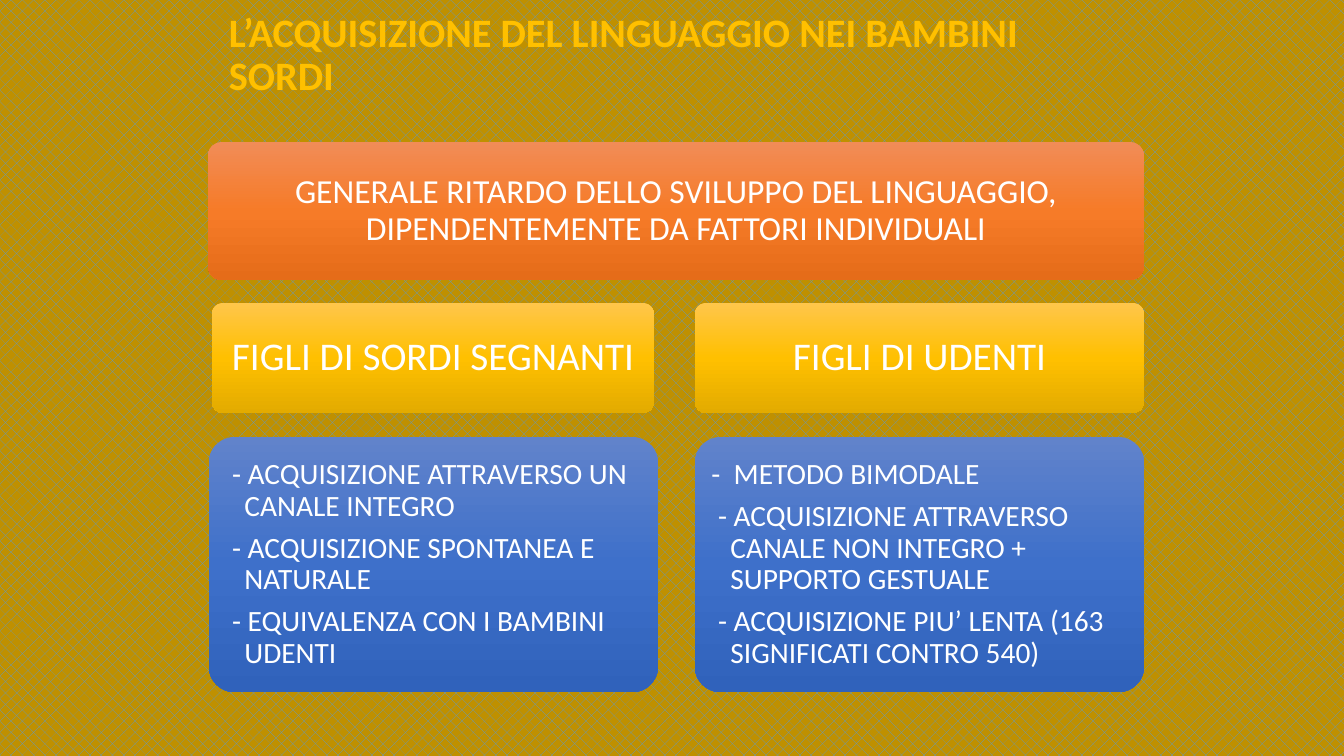
from copy import deepcopy

from pptx import Presentation
from pptx.dml.color import RGBColor
from pptx.enum.dml import MSO_PATTERN
from pptx.enum.shapes import MSO_SHAPE
from pptx.enum.text import MSO_ANCHOR, PP_ALIGN
from pptx.util import Emu, Pt

# Content
TITLE = "L’ACQUISIZIONE DEL LINGUAGGIO NEI BAMBINI SORDI"
SUMMARY = "GENERALE RITARDO DELLO SVILUPPO DEL LINGUAGGIO, DIPENDENTEMENTE DA FATTORI INDIVIDUALI"
GROUPS = [
    ("FIGLI DI SORDI SEGNANTI", [
        " - ACQUISIZIONE ATTRAVERSO UN CANALE INTEGRO",
        " - ACQUISIZIONE SPONTANEA E NATURALE",
        " - EQUIVALENZA CON I BAMBINI UDENTI",
    ]),
    ("FIGLI DI UDENTI", [
        "-  METODO BIMODALE",
        " - ACQUISIZIONE ATTRAVERSO CANALE NON INTEGRO + SUPPORTO GESTUALE",
        " - ACQUISIZIONE PIU’ LENTA (163 SIGNIFICATI CONTRO 540)",
    ]),
]

THEME = {
    "font": "Calibri",
    "title": {"size": 28.8, "color": "FFC000"},
    "text": "FFFFFF",
    "pattern": {"fore_color": "5B9BD5", "back_color": "BF9000"},
    "summary": {"size": 24, "inset": 10, "stops": ("F18C57", "F67B28", "E56C19")},
    "heading": {"size": 28, "inset": 12, "stops": ("FFC64B", "FFC000", "E3AB00")},
    "card": {"size": 21, "inset": 9, "stops": ("6183CB", "3E70CA", "3062BB")},
}

# Geometry in px
SCALE = 914400 / 100.8
PAGE = (1344, 756)
TITLE_BOX = (219, 16, 907, 80)
SUMMARY_BOX = (208, 142, 936, 138)
HEADING_ROW = (303, 110)
CARD_ROW = (437, 255)
COLUMNS = [{"heading": (212, 442), "card": (209, 449)},
           {"heading": (695, 449), "card": (695, 449)}]
HANGING = 19


def px(value):
    return Emu(round(value * SCALE))


def apply(target, values):
    for name, value in values.items():
        setattr(target, name, value)


def write(frame, lines, size, color, inset=None, bold=False, align=PP_ALIGN.LEFT, hanging=0):
    apply(frame, {"word_wrap": True, "vertical_anchor": MSO_ANCHOR.MIDDLE})
    if inset:
        sides = ("left", "top", "right", "bottom")
        apply(frame, {f"margin_{side}": px(inset) for side in sides})
    for index, line in enumerate(lines):
        para = frame.add_paragraph() if index else frame.paragraphs[0]
        apply(para, {"alignment": align, "line_spacing": 0.9, "space_after": Pt(0.35 * size)})
        if hanging:
            properties = para._p.get_or_add_pPr()
            properties.set("marL", str(px(hanging)))
            properties.set("indent", str(-px(hanging)))
        span = para.add_run()
        span.text = line
        apply(span.font, {"name": THEME["font"], "size": Pt(size), "bold": bold})
        span.font.color.rgb = RGBColor.from_string(color)


def add_panel(page, box, style, lines, **text_format):
    panel = page.shapes.add_shape(MSO_SHAPE.ROUNDED_RECTANGLE, *map(px, box))
    panel.adjustments[0] = 0.1
    panel.shadow.inherit = False
    panel.line.fill.background()

    # Vertical three-stop gradient
    panel.fill.gradient()
    panel.fill.gradient_angle = 270
    stop_list = panel.element.spPr.xpath(".//a:gsLst")[0]
    stop_list.insert(1, deepcopy(stop_list[0]))
    for index, stop in enumerate(panel.fill.gradient_stops):
        stop.position = index / 2
        stop.color.rgb = RGBColor.from_string(style["stops"][index])

    write(panel.text_frame, lines, style["size"], THEME["text"], style["inset"], **text_format)


def main():
    deck = Presentation()
    apply(deck, {"slide_width": px(PAGE[0]), "slide_height": px(PAGE[1])})
    page = deck.slides.add_slide(deck.slide_layouts[6])

    # Patterned background
    backdrop = page.background.fill
    backdrop.patterned()
    backdrop.pattern = MSO_PATTERN.PERCENT_25
    for part, color in THEME["pattern"].items():
        getattr(backdrop, part).rgb = RGBColor.from_string(color)

    # Title and summary
    title = page.shapes.add_textbox(*map(px, TITLE_BOX))
    write(title.text_frame, [TITLE], **THEME["title"], bold=True)
    add_panel(page, SUMMARY_BOX, THEME["summary"], [SUMMARY], align=PP_ALIGN.CENTER)

    # One heading and one card per group
    for (heading, points), column in zip(GROUPS, COLUMNS):
        left, width = column["heading"]
        top, height = HEADING_ROW
        add_panel(page, (left, top, width, height), THEME["heading"], [heading],
                  align=PP_ALIGN.CENTER)
        left, width = column["card"]
        top, height = CARD_ROW
        add_panel(page, (left, top, width, height), THEME["card"], points, hanging=HANGING)

    deck.save("out.pptx")


if __name__ == "__main__":
    main()
